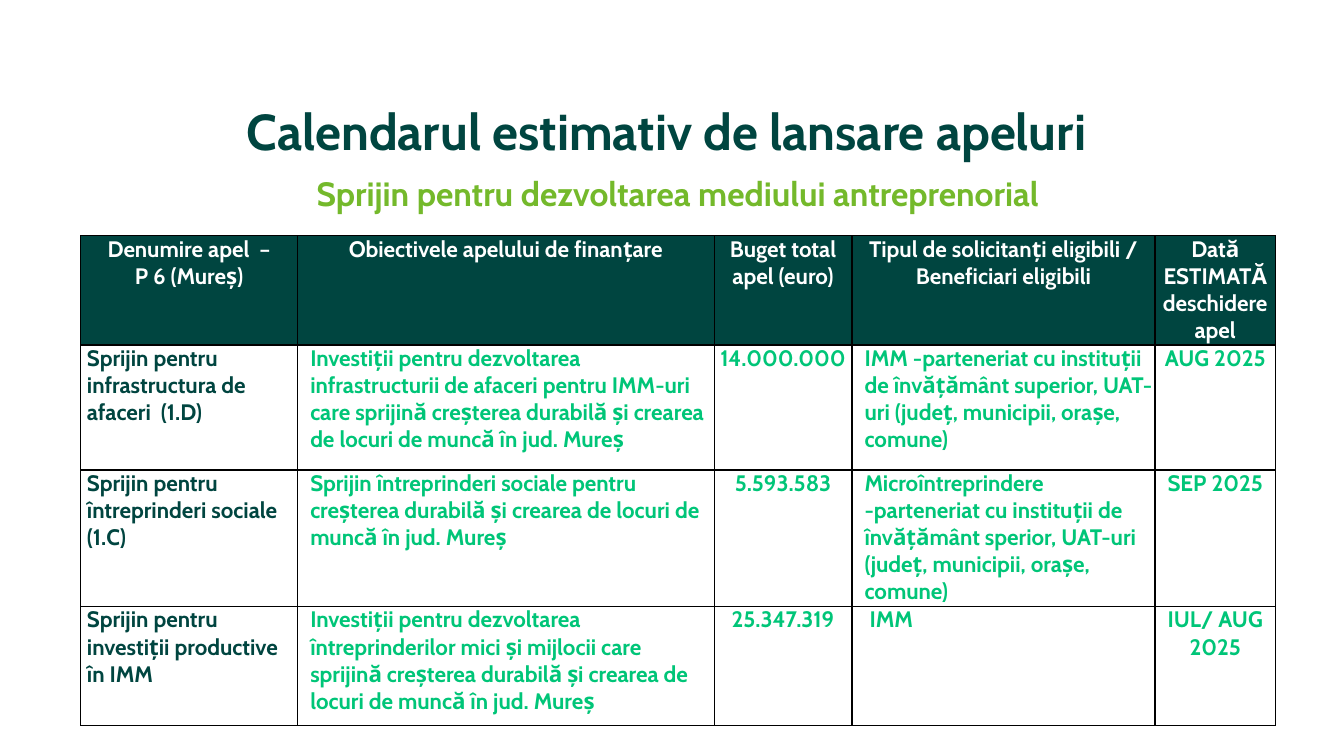
from dataclasses import dataclass

from lxml.etree import SubElement
from pptx import Presentation
from pptx.dml.color import RGBColor as RGB
from pptx.enum.text import MSO_ANCHOR as ANCHOR, PP_ALIGN as ALIGN
from pptx.oxml.ns import qn
from pptx.util import Pt


@dataclass
class Theme:
    font: str = "Cabin"
    dark: str = "004540"
    lime: str = "74B92B"
    green: str = "00C578"
    white: str = "FFFFFF"
    border: str = "000000"
    title: int = 36
    subtitle: int = 24
    body: int = 16


theme = Theme()


def write(tf, text, size, color, align=ALIGN.LEFT, indent=0, spacing=None):
    """Fill a text frame, one paragraph per line of text."""
    tf.word_wrap = True
    for i, line in enumerate(text.split("\n")):
        p = tf.add_paragraph() if i else tf.paragraphs[0]
        p.alignment = align
        if spacing:
            p.line_spacing = spacing
        if indent:
            pPr = p._p.get_or_add_pPr()
            pPr.set("marL", str(Pt(indent)))
            pPr.set("indent", "0")
        r = p.add_run()
        r.text = line
        r.font.name, r.font.size, r.font.bold = theme.font, Pt(size), True
        r.font.color.rgb = RGB.from_string(color)


def add_borders(cell, color, width):
    """Draw all four sides of a cell; lines come before the fill in tcPr."""
    tcPr = cell._tc.get_or_add_tcPr()
    for i, side in enumerate(("lnL", "lnR", "lnT", "lnB")):
        ln = SubElement(tcPr, qn(f"a:{side}"), w=str(Pt(width)))
        fill = SubElement(ln, qn("a:solidFill"))
        SubElement(fill, qn("a:srgbClr"), val=color)
        tcPr.insert(i, ln)


prs = Presentation()
prs.slide_width, prs.slide_height = Pt(960), Pt(540)
s = prs.slides.add_slide(prs.slide_layouts[6])

# Title and subtitle
title = s.shapes.add_textbox(Pt(62), Pt(72), Pt(828), Pt(48))
title.text_frame.vertical_anchor = ANCHOR.MIDDLE
write(title.text_frame, "Calendarul estimativ de lansare apeluri",
      theme.title, theme.dark, align=ALIGN.CENTER, spacing=0.9)
subtitle = s.shapes.add_textbox(Pt(195), Pt(120), Pt(578), Pt(36))
write(subtitle.text_frame, "Sprijin pentru dezvoltarea mediului antreprenorial",
      theme.subtitle, theme.lime, align=ALIGN.CENTER)

# Table content
rows = [
    ("Denumire apel  –\nP 6 (Mureș)",
     "Obiectivele apelului de finanțare",
     "Buget total apel (euro)",
     "Tipul de solicitanți eligibili / Beneficiari eligibili",
     "Dată ESTIMATĂ deschidere apel"),
    ("Sprijin pentru infrastructura de afaceri  (1.D)",
     "Investiții pentru dezvoltarea infrastructurii de afaceri pentru IMM-uri "
     "care sprijină creșterea durabilă și crearea de locuri de muncă în jud. Mureș",
     "14.000.000",
     "IMM -parteneriat cu instituții de învățământ superior, UAT-uri "
     "(județ, municipii, orașe, comune)",
     "AUG 2025"),
    ("Sprijin pentru întreprinderi sociale (1.C)",
     "Sprijin întreprinderi sociale pentru creșterea durabilă și crearea de "
     "locuri de muncă în jud. Mureș",
     "5.593.583",
     "Microîntreprindere -parteneriat cu instituții de învățământ sperior, "
     "UAT-uri (județ, municipii, orașe, comune)",
     "SEP 2025"),
    ("Sprijin pentru investiții productive în IMM",
     "Investiții pentru dezvoltarea întreprinderilor mici și mijlocii care "
     "sprijină creșterea durabilă și crearea de locuri de muncă în jud. Mureș",
     "25.347.319",
     " IMM",
     "IUL/ AUG 2025"),
]
col_widths = [155, 297.5, 98.5, 216.5, 86]
row_heights = [78, 89.3, 97.4, 85]
# Body format of each column: colour, alignment, indent
col_formats = [
    (theme.dark, ALIGN.LEFT, 4.5),
    (theme.green, ALIGN.LEFT, 9),
    (theme.green, ALIGN.CENTER, 0),
    (theme.green, ALIGN.LEFT, 9),
    (theme.green, ALIGN.CENTER, 0),
]

# Table of calls
frame = s.shapes.add_table(len(rows), len(col_widths), Pt(57.6), Pt(168.5),
                           Pt(sum(col_widths)), Pt(sum(row_heights)))
table = frame.table
for column, width in zip(table.columns, col_widths):
    column.width = Pt(width)
for row, height in zip(table.rows, row_heights):
    row.height = Pt(height)

for i, texts in enumerate(rows):
    for j, text in enumerate(texts):
        cell = table.cell(i, j)
        cell.margin_left = cell.margin_right = 0
        cell.margin_top = cell.margin_bottom = 0
        cell.fill.solid()
        cell.fill.fore_color.rgb = RGB.from_string(theme.white if i else theme.dark)
        add_borders(cell, theme.border, 1)
        color, align, indent = col_formats[j] if i else (theme.white, ALIGN.CENTER, 0)
        write(cell.text_frame, text, theme.body, color, align=align, indent=indent)

prs.save("out.pptx")
